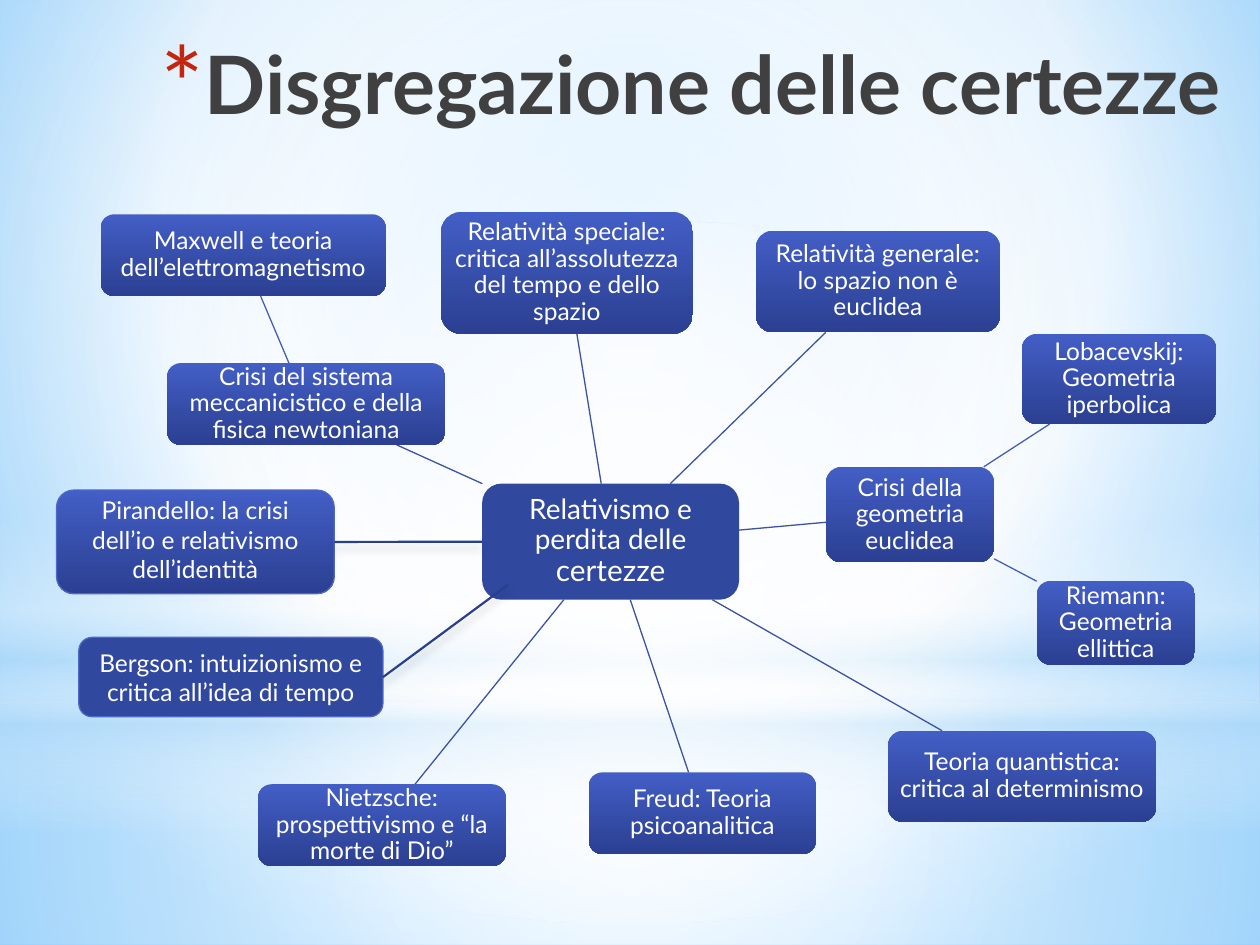
"""Build a concept map slide about the collapse of certainties."""
from dataclasses import dataclass
from typing import Any, NamedTuple, Optional

import lxml.etree
import pptx
import pptx.dml.color
import pptx.enum.shapes
import pptx.enum.text
import pptx.oxml.ns
import pptx.util

Cm = pptx.util.Cm
Pt = pptx.util.Pt
qn = pptx.oxml.ns.qn
Shape = pptx.enum.shapes.MSO_SHAPE
Anchor = pptx.enum.text.MSO_ANCHOR
Align = pptx.enum.text.PP_ALIGN


class Stop(NamedTuple):
    place: int
    colour: str
    opacity: int = 100


class Gradient(NamedTuple):
    stops: tuple[Stop, ...]
    focus: Optional[tuple[int, int, int, int]] = None


class Frame(NamedTuple):
    left: float
    top: float
    width: float
    height: float

    @property
    def centre(self) -> tuple[float, float]:
        return self.left + self.width / 2, self.top + self.height / 2

    def edge_towards(self, other: "Frame") -> tuple[float, float]:
        (x, y), (far_x, far_y) = self.centre, other.centre
        run, rise = far_x - x, far_y - y
        scale = 1 / max(abs(run) / (self.width / 2), abs(rise) / (self.height / 2))
        return x + run * scale, y + rise * scale


@dataclass(frozen=True)
class Theme:
    font: str = "Lato"
    title_size: int = 46
    node_size: int = 14
    title: str = "404040"
    bullet: str = "C3260C"
    text: str = "FFFFFF"
    flat: str = "31489F"
    outline: str = "4E67C8"
    inner_link: str = "3E52A0"
    outer_link: str = "475DB6"
    bold_link: str = "2A3E8E"
    node: Gradient = Gradient((Stop(0, "435EC5"), Stop(100, "2B4092")))
    sky: Gradient = Gradient(
        (Stop(0, "9ED5FF"), Stop(60, "FFFFFF"), Stop(100, "5BB9FF")), (20, 10, 20, 60))


THEME = Theme()
MIDDLE = (50, 50, 50, 50)
TIGHT = dict.fromkeys(("margin_left", "margin_right", "margin_top", "margin_bottom"), Cm(0.1))
DEFAULT = dict(margin_left=Cm(0.25), margin_right=Cm(0.25), vertical_anchor=Anchor.MIDDLE)


@dataclass(frozen=True)
class Node:
    frame: Frame
    spans: tuple[tuple[str, int], ...]
    parent: str = ""
    fill: Any = THEME.node
    outline: str = ""
    spacing: float = 0.9
    layout: Any = None


@dataclass(frozen=True)
class Glow:
    frame: Frame
    fill: Gradient
    kind: Any = Shape.RECTANGLE


def label(text: str) -> tuple[tuple[str, int], ...]:
    return ((text, THEME.node_size),)


GLOWS = (
    Glow(Frame(0, 14.17, 25.4, 4.88), Gradient(
        (Stop(0, "FFFFFF", 91), Stop(37, "FFFFFF", 76), Stop(100, "B4DCFA", 79)), MIDDLE)),
    Glow(Frame(0, 0, 25.4, 14.17), Gradient(
        (Stop(0, "FFFFFF", 89), Stop(48, "FFFFFF", 62), Stop(100, "B4DCFA", 79)), MIDDLE)),
    Glow(Frame(0, 10.46, 25.4, 6.35), Gradient(
        (Stop(0, "FFFFFF", 0), Stop(29, "FFFFFF", 30), Stop(45, "B4DCFA", 40),
         Stop(55, "FFFFFF", 26), Stop(65, "B4DCFA", 60), Stop(100, "FFFFFF", 0)))),
    Glow(Frame(0, 4.45, 25.4, 14.17), Gradient(
        (Stop(0, "FFFFFF"), Stop(56, "FFFFFF", 0)), MIDDLE), Shape.OVAL),
)
NODES = {
    "core": Node(Frame(9.72, 9.75, 5.18, 2.34),
                 (("Relativismo e perdita delle ", 16), ("certezze", 17)), fill=THEME.flat),
    "special": Node(Frame(8.89, 4.27, 5.08, 2.46), label(
        "Relatività speciale: critica all’assolutezza del tempo e dello spazio"), "core"),
    "newton": Node(Frame(3.37, 7.32, 5.61, 1.65), label(
        "Crisi del sistema meccanicistico e della fisica newtoniana"), "core"),
    "maxwell": Node(Frame(2.03, 4.32, 5.75, 1.65), label(
        "Maxwell e teoria dell’elettromagnetismo"), "newton"),
    "general": Node(Frame(15.24, 4.65, 4.92, 2.05), label(
        "Relatività generale: lo spazio non è euclidea"), "core"),
    "geometry": Node(Frame(16.65, 9.41, 3.39, 1.93), label(
        "Crisi della geometria euclidea"), "core"),
    "hyperbolic": Node(Frame(20.6, 6.73, 3.92, 1.82), label(
        "Lobacevskij: Geometria iperbolica"), "geometry"),
    "elliptic": Node(Frame(20.9, 11.71, 3.19, 1.69), label(
        "Riemann: Geometria ellittica"), "geometry"),
    "quantum": Node(Frame(17.9, 14.73, 5.41, 1.84), label(
        "Teoria quantistica: critica al determinismo"), "core"),
    "freud": Node(Frame(11.87, 15.57, 4.58, 1.65), label("Freud: Teoria psicoanalitica"), "core"),
    "nietzsche": Node(Frame(5.2, 15.81, 5, 1.65), label(
        "Nietzsche: prospettivismo e “la morte di Dio”"), "core"),
    "pirandello": Node(
        Frame(1.14, 9.88, 5.6, 2.09),
        label("Pirandello: la crisi dell’io e relativismo dell’identità"),
        outline=THEME.outline, spacing=1.0,
        layout=DEFAULT | dict(margin_top=0, margin_bottom=Cm(0.3), vertical_anchor=Anchor.TOP)),
    "bergson": Node(
        Frame(1.59, 12.85, 6.13, 1.6), label("Bergson: intuizionismo e critica all’idea di tempo"),
        fill=THEME.flat, outline=THEME.outline, spacing=1.0, layout=DEFAULT),
}


def apply(target: Any, values: dict[str, Any]) -> None:
    for name, value in values.items():
        setattr(target, name, value)


def rgb(colour: str) -> pptx.dml.color.RGBColor:
    return pptx.dml.color.RGBColor.from_string(colour)


def add(parent: Any, tag: str, **values: Any) -> Any:
    return lxml.etree.SubElement(parent, qn(tag), {k: str(v) for k, v in values.items()})


def paint(fill: Any, holder: Any, look: Any) -> None:
    fill.solid()
    if isinstance(look, str):
        fill.fore_color.rgb = rgb(look)
        return
    solid = holder.find(qn("a:solidFill"))
    grad = add(holder, "a:gradFill", rotWithShape=1)
    holder.replace(solid, grad)
    stops = add(grad, "a:gsLst")
    for stop in look.stops:
        colour = add(add(stops, "a:gs", pos=stop.place * 1000), "a:srgbClr", val=stop.colour)
        add(colour, "a:alpha", val=stop.opacity * 1000)
    if look.focus:
        sides = {side: part * 1000 for side, part in zip("ltrb", look.focus)}
        add(add(grad, "a:path", path="circle"), "a:fillToRect", **sides)
    else:
        add(grad, "a:lin", ang=5400000, scaled=0)


def add_block(page: Any, kind: Any, frame: Frame, look: Any) -> Any:
    box = page.shapes.add_shape(kind, *map(Cm, frame))
    box.shadow.inherit = False
    paint(box.fill, box._element.spPr, look)
    box.line.fill.background()
    return box


def add_node(page: Any, node: Node) -> Any:
    box = add_block(page, Shape.ROUNDED_RECTANGLE, node.frame, node.fill)
    if node.outline:
        box.line.color.rgb = rgb(node.outline)
        box.line.width = Pt(0.75)
    apply(box.text_frame, dict(word_wrap=True, vertical_anchor=Anchor.MIDDLE)
          | (node.layout or TIGHT))
    para = box.text_frame.paragraphs[0]
    apply(para, dict(alignment=Align.CENTER, line_spacing=node.spacing))
    for text, size in node.spans:
        span = para.add_run()
        span.text = text
        apply(span.font, dict(name=THEME.font, size=Pt(size)))
        span.font.color.rgb = rgb(THEME.text)
    return box


def add_link(page: Any, start: tuple[float, float], end: tuple[float, float],
             colour: str, width: float, shadow: bool = False) -> Any:
    link = page.shapes.add_connector(
        pptx.enum.shapes.MSO_CONNECTOR.STRAIGHT, *map(Cm, (*start, *end)))
    link.line.color.rgb = rgb(colour)
    link.line.width = Pt(width)
    effects = add(link._element.spPr, "a:effectLst")
    if shadow:
        cast = add(effects, "a:outerShdw", blurRad=Pt(5), dist=Pt(4), dir=5400000, rotWithShape=0)
        add(add(cast, "a:srgbClr", val="000000"), "a:alpha", val=20000)
    return link


def set_title(page: Any) -> None:
    title = page.shapes.title
    apply(title, dict(left=Cm(1.14), top=Cm(0.56), width=Cm(23.72), height=Cm(2.95)))
    title.text_frame.text = "Disgregazione delle certezze"
    apply(title.text_frame, dict(vertical_anchor=Anchor.TOP, word_wrap=True,
                                 auto_size=pptx.enum.text.MSO_AUTO_SIZE.NONE))
    para = title.text_frame.paragraphs[0]
    para.alignment = Align.RIGHT
    marks = para._p.get_or_add_pPr()
    marks.set("marL", str(Cm(0.89)))
    marks.set("indent", str(-Cm(0.89)))
    add(add(marks, "a:buClr"), "a:srgbClr", val=THEME.bullet)
    add(marks, "a:buSzPct", val=128000)
    add(marks, "a:buFont", typeface=THEME.font)
    add(marks, "a:buChar", char="*")
    font = para.runs[0].font
    apply(font, dict(name=THEME.font, size=Pt(THEME.title_size), bold=True))
    font.color.rgb = rgb(THEME.title)
    page.shapes._spTree.append(title._element)


def main() -> None:
    deck = pptx.Presentation()
    apply(deck, dict(slide_width=Cm(25.4), slide_height=Cm(19.05)))
    page = deck.slides.add_slide(deck.slide_layouts[5])
    fill = page.background.fill
    fill.solid()
    paint(fill, page._element.xpath(".//p:bgPr")[0], THEME.sky)
    for glow in GLOWS:
        add_block(page, glow.kind, glow.frame, glow.fill)
    set_title(page)
    for node in filter(lambda item: item.parent, NODES.values()):
        parent = NODES[node.parent]
        colour = THEME.outer_link if parent.parent else THEME.inner_link
        add_link(page, parent.frame.edge_towards(node.frame),
                 node.frame.edge_towards(parent.frame), colour, 0.75)
    boxes = {name: add_node(page, node) for name, node in NODES.items()}
    for name, end in (("pirandello", (9.72, 10.92)), ("bergson", (10.24, 11.79))):
        frame = NODES[name].frame
        start = frame.left + frame.width, frame.centre[1]
        link = add_link(page, start, end, THEME.bold_link, 1.25, shadow=True)
        link.begin_connect(boxes[name], 3)
        if name == "pirandello":
            link.end_connect(boxes["core"], 1)
    deck.save("out.pptx")


if __name__ == "__main__":
    main()
